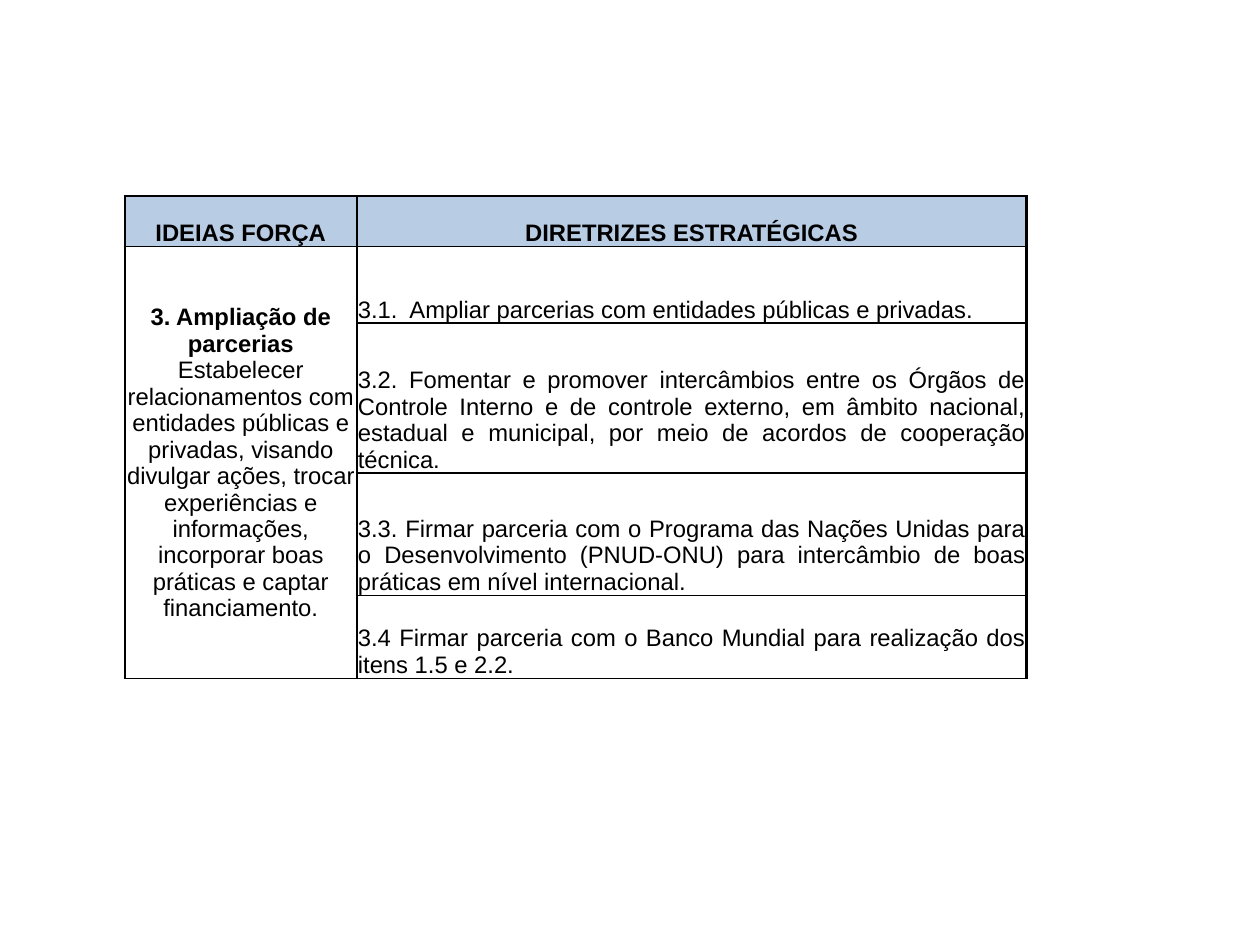
from lxml.etree import SubElement
from pptx import Presentation
from pptx.dml.color import RGBColor
from pptx.enum.text import MSO_ANCHOR as Anchor, PP_ALIGN as Align
from pptx.oxml.ns import qn
from pptx.util import Pt

BLACK = RGBColor(0x00, 0x00, 0x00)
HEADER_BLUE = RGBColor(0xB8, 0xCC, 0xE4)

COLUMN_WIDTHS = (146.2, 421.9)
ROW_HEIGHTS = (31.8, 48.2, 94.4, 77, 52.4)
HEADERS = ("IDEIAS FORÇA", "DIRETRIZES ESTRATÉGICAS")
IDEA_TITLE = "3. Ampliação de parcerias "
IDEA_TEXT = (
    "Estabelecer relacionamentos com entidades públicas e privadas, visando "
    "divulgar ações, trocar experiências e informações, incorporar boas "
    "práticas e captar financiamento."
)
GUIDELINES = (
    "3.1.  Ampliar parcerias com entidades públicas e privadas.",
    "3.2. Fomentar e promover intercâmbios entre os Órgãos de Controle Interno "
    "e de controle externo, em âmbito nacional, estadual e municipal, por meio "
    "de acordos de cooperação técnica.",
    "3.3. Firmar parceria com o Programa das Nações Unidas para o "
    "Desenvolvimento (PNUD-ONU) para intercâmbio de boas práticas em nível "
    "internacional.",
    "3.4 Firmar parceria com o Banco Mundial para realização dos itens 1.5 e 2.2.",
)


def set_borders(cell, top_width):
    properties = cell._tc.get_or_add_tcPr()
    widths = (("lnL", 1.5), ("lnR", 1.5), ("lnT", top_width), ("lnB", 1))
    for side, width in widths:
        line = SubElement(properties, qn(f"a:{side}"), w=str(Pt(width)))
        fill = SubElement(line, qn("a:solidFill"))
        SubElement(fill, qn("a:srgbClr"), val=str(BLACK))


def format_cell(cell, is_header):
    set_borders(cell, 1.5 if is_header else 1)
    if is_header:
        cell.fill.solid()
        cell.fill.fore_color.rgb = HEADER_BLUE
    else:
        cell.fill.background()
    cell.margin_left = cell.margin_right = cell.margin_top = Pt(0.7)
    cell.margin_bottom = Pt(0)


def write_cell(cell, spans, align, anchor=Anchor.BOTTOM):
    cell.vertical_anchor = anchor
    para = cell.text_frame.paragraphs[0]
    para.alignment = align
    for text, bold in spans:
        span = para.add_run()
        span.text = text
        span.font.name = "Arial"
        span.font.size = Pt(15)
        span.font.bold = bold
        span.font.color.rgb = BLACK


def add_grid(page):
    frame = page.shapes.add_table(
        len(ROW_HEIGHTS), len(COLUMN_WIDTHS), Pt(78.6), Pt(123.6),
        Pt(sum(COLUMN_WIDTHS)), Pt(sum(ROW_HEIGHTS)))
    table = frame.table
    table.horz_banding = False
    table.first_row = False
    for column, width in zip(table.columns, COLUMN_WIDTHS):
        column.width = Pt(width)
    for index, (row, height) in enumerate(zip(table.rows, ROW_HEIGHTS)):
        row.height = Pt(height)
        for cell in row.cells:
            format_cell(cell, index == 0)
    return table


def main():
    deck = Presentation()
    deck.slide_width, deck.slide_height = Pt(793.75), Pt(595.25)
    page = deck.slides.add_slide(deck.slide_layouts[6])

    table = add_grid(page)
    for column, header in enumerate(HEADERS):
        write_cell(table.cell(0, column), [(header, True)], Align.CENTER)

    idea = table.cell(1, 0)
    idea.merge(table.cell(len(GUIDELINES), 0))
    write_cell(idea, [(IDEA_TITLE, True), (IDEA_TEXT, False)],
               Align.CENTER, Anchor.MIDDLE)

    for row, guideline in enumerate(GUIDELINES, start=1):
        write_cell(table.cell(row, 1), [(guideline, False)], Align.JUSTIFY)

    deck.save("out.pptx")


if __name__ == "__main__":
    main()
